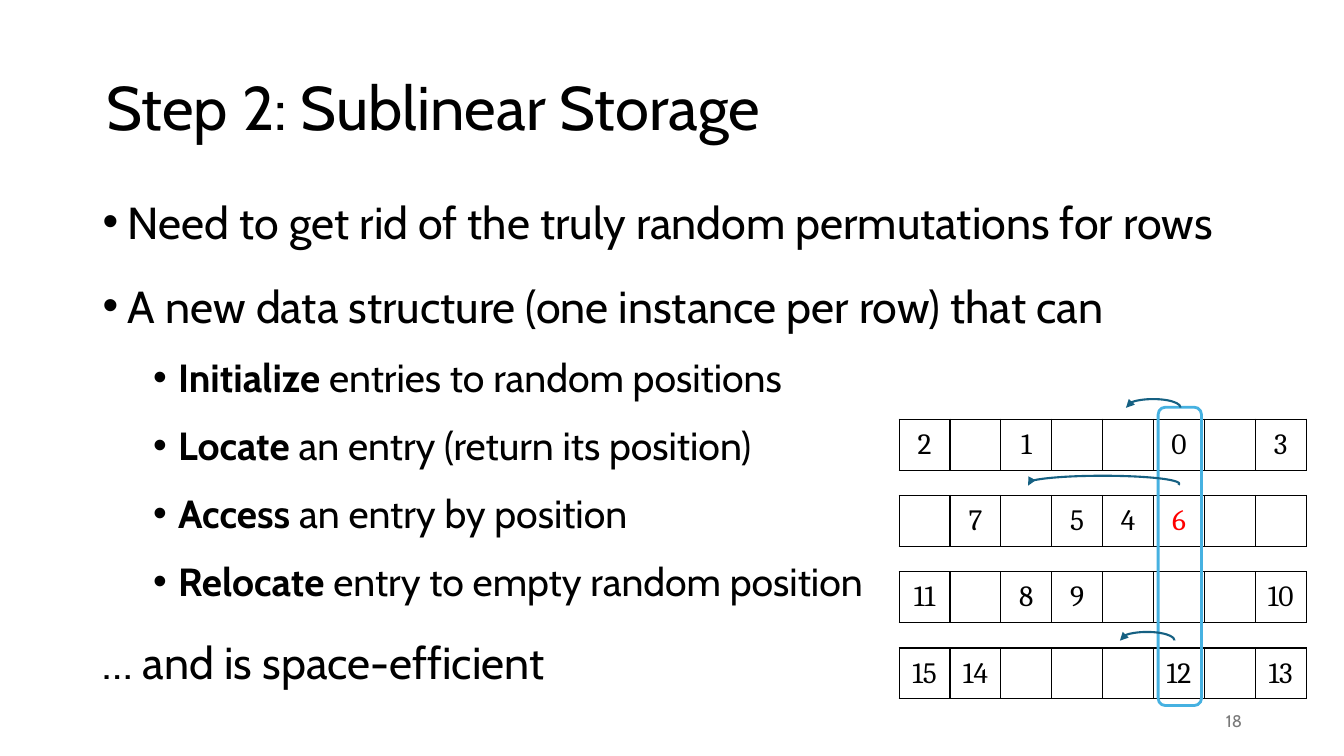
from typing import NamedTuple

import pptx
import pptx.dml.color
import pptx.enum.shapes
import pptx.enum.text
import pptx.oxml
import pptx.oxml.ns
import pptx.util

Pt = pptx.util.Pt
ALIGN = pptx.enum.text.PP_ALIGN
ANCHOR = pptx.enum.text.MSO_ANCHOR
SHAPE = pptx.enum.shapes.MSO_SHAPE
NS = pptx.oxml.ns.nsdecls("a")

TEXT_FONT, CELL_FONT = "Cabin", "Cambria"
BLACK, RED, GREY = "000000", "FF0000", "797979"
SKY, TEAL = "46B1E1", "156082"
CELL = 36.36
GRID_LEFT, GRID_TOP, ROW_PITCH = 642.24, 299.52, 54.44


class Box(NamedTuple):
    left: float
    top: float
    width: float
    height: float

    def lengths(self) -> list:
        return [Pt(v) for v in self]


class Bullet(NamedTuple):
    level: int
    strong: str
    plain: str


BULLETS = [
    Bullet(0, "", "Need to get rid of the truly random permutations for rows"),
    Bullet(0, "", "A new data structure (one instance per row) that can"),
    Bullet(1, "Initialize", " entries to random positions"),
    Bullet(1, "Locate", " an entry (return its position)"),
    Bullet(1, "Access", " an entry by position"),
    Bullet(1, "Relocate", " entry to empty random position"),
]
CLOSING = "… and is space-efficient"
ROWS = [
    ["2", "", "1", "", "", "0", "", "3"],
    ["", "7", "", "5", "4", "6", "", ""],
    ["11", "", "8", "9", "", "", "", "10"],
    ["15", "14", "", "", "", "12", "", "13"],
]
MOVED_ENTRY = "6"
ARROWS = [
    Box(732.96, 339.84, 109.44, 11.52),
    Box(799.92, 451.44, 38.88, 11.52),
    Box(804.24, 285.12, 38.88, 11.52),
]


def rgb(value: str) -> pptx.dml.color.RGBColor:
    return pptx.dml.color.RGBColor.from_string(value)


def add_run(p, text: str, size: float, color: str = BLACK,
            font: str = TEXT_FONT, bold: bool = False) -> None:
    r = p.add_run()
    r.text = text
    r.font.size = Pt(size)
    r.font.name = font
    r.font.bold = bold
    r.font.color.rgb = rgb(color)


def add_text_frame(s, box: Box, anchor: ANCHOR):
    tf = s.shapes.add_textbox(*box.lengths()).text_frame
    tf.word_wrap = True
    tf.vertical_anchor = anchor
    return tf


def set_bullet(p, level: int) -> None:
    p.level = level
    pPr = p._p.get_or_add_pPr()
    pPr.set("marL", str(Pt(18 + 36 * level)))
    pPr.set("indent", str(Pt(-18)))
    pPr.append(pptx.oxml.parse_xml(f'<a:buFont {NS} typeface="Arial"/>'))
    pPr.append(pptx.oxml.parse_xml(f'<a:buChar {NS} char="•"/>'))


def add_title(s, text: str) -> None:
    sp = s.shapes.title
    sp.left, sp.top, sp.width, sp.height = Box(69.12, 36.72, 665.28, 84.96).lengths()
    tf = sp.text_frame
    tf.auto_size = pptx.enum.text.MSO_AUTO_SIZE.NONE
    tf.vertical_anchor = ANCHOR.MIDDLE
    p = tf.paragraphs[0]
    p.alignment = ALIGN.LEFT
    p.line_spacing = 0.9
    add_run(p, text, 44)


def add_body(s) -> None:
    tf = add_text_frame(s, Box(66.24, 123.84, 866.88, 380.16), ANCHOR.TOP)
    for i, bullet in enumerate(BULLETS + [Bullet(0, "", CLOSING)]):
        p = tf.add_paragraph() if i else tf.paragraphs[0]
        p.line_spacing = 1.3
        p.space_before = Pt(5 if bullet.level else 10)
        if bullet.plain != CLOSING:
            set_bullet(p, bullet.level)
        size = 28 if bullet.level else 32
        if bullet.strong:
            add_run(p, bullet.strong, size, bold=True)
        add_run(p, bullet.plain, size)


def format_cell(cell, text: str) -> None:
    cell.margin_left = cell.margin_right = Pt(4.32)
    cell.margin_top = cell.margin_bottom = Pt(2.16)
    cell.vertical_anchor = ANCHOR.MIDDLE
    tcPr = cell._tc.get_or_add_tcPr()
    for side in ("lnL", "lnR", "lnT", "lnB"):
        tcPr.append(pptx.oxml.parse_xml(
            f'<a:{side} {NS} w="{Pt(1)}"><a:solidFill><a:srgbClr val="{BLACK}"/>'
            f'</a:solidFill></a:{side}>'))
    cell.fill.background()
    if text:
        p = cell.text_frame.paragraphs[0]
        p.alignment = ALIGN.CENTER
        add_run(p, text, 21, RED if text == MOVED_ENTRY else BLACK, CELL_FONT)


def add_row(s, top: float, entries: list[str]) -> None:
    box = Box(GRID_LEFT, top, CELL * len(entries), CELL)
    table = s.shapes.add_table(1, len(entries), *box.lengths()).table
    table.first_row = table.horz_banding = False
    for column, cell, text in zip(table.columns, table.rows[0].cells, entries):
        column.width = Pt(CELL)
        format_cell(cell, text)


def add_outline(s, kind: SHAPE, box: Box, color: str, weight: float):
    sp = s.shapes.add_shape(kind, *box.lengths())
    sp.shadow.inherit = False
    sp.fill.background()
    sp.line.color.rgb = rgb(color)
    sp.line.width = Pt(weight)
    return sp


def add_curved_arrow(s, box: Box) -> None:
    """Draw the upper half of an ellipse with an arrowhead at its left end."""
    sp = add_outline(s, SHAPE.ARC, box, TEAL, 1.5)
    sp.adjustments[0] = 107.15
    sp.adjustments[1] = 0.52
    sp.line._get_or_add_ln().append(
        pptx.oxml.parse_xml(f'<a:headEnd {NS} type="triangle"/>'))


def main() -> None:
    prs = pptx.Presentation()
    prs.slide_width, prs.slide_height = Pt(960), Pt(540)
    s = prs.slides.add_slide(prs.slide_layouts[5])

    add_title(s, "Step 2: Sublinear Storage")
    add_body(s)
    for i, entries in enumerate(ROWS):
        add_row(s, GRID_TOP + i * ROW_PITCH, entries)
    add_outline(s, SHAPE.ROUNDED_RECTANGLE,
                Box(827.28, 290.88, 30.96, 213.12), SKY, 2)
    for box in ARROWS:
        add_curved_arrow(s, box)

    tf = add_text_frame(s, Box(678.24, 500.4, 216, 28.8), ANCHOR.MIDDLE)
    p = tf.paragraphs[0]
    p.alignment = ALIGN.RIGHT
    add_run(p, "18", 12, GREY)

    prs.save("out.pptx")


if __name__ == "__main__":
    main()
